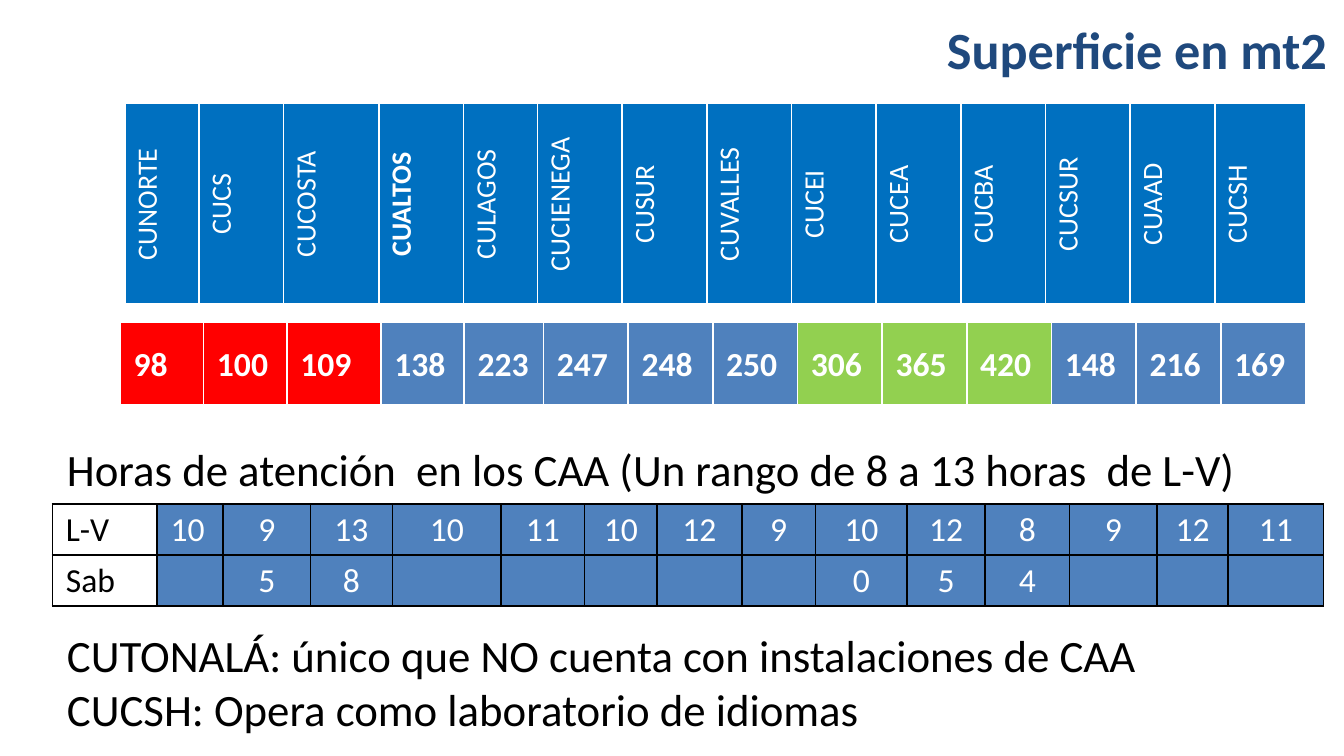
from lxml.etree import SubElement
from pptx import Presentation
from pptx.dml.color import RGBColor
from pptx.enum.text import MSO_ANCHOR, PP_ALIGN
from pptx.oxml.ns import qn
from pptx.util import Inches, Pt

WIDTH = 10
HEIGHT = WIDTH * 9 / 16
COLS, ROWS = 100, 56.25
BLUE, RED, GREEN, HEADER = "4F81BD", "FF0000", "92D050", "0070C0"
WHITE, BLACK, NAVY = "FFFFFF", "000000", "1F497D"
WHITE_EDGES = {"L": (WHITE, 1), "R": (WHITE, 1), "T": (WHITE, 1), "B": (WHITE, 3)}
BLACK_EDGES = {side: (BLACK, 1) for side in "LRTB"}

CENTERS = ["CUNORTE", "CUCS", "CUCOSTA", "CUALTOS", "CULAGOS", "CUCIENEGA", "CUSUR",
           "CUVALLES", "CUCEI", "CUCEA", "CUCBA", "CUCSUR", "CUAAD", "CUCSH"]
AREAS = [98, 100, 109, 138, 223, 247, 248, 250, 306, 365, 420, 148, 216, 169]
AREA_FILLS = [RED] * 3 + [BLUE] * 5 + [GREEN] * 3 + [BLUE] * 3
HOURS = [
    ["L-V", 10, 9, 13, 10, 11, 10, 12, 9, 10, 12, 8, 9, 12, 11],
    ["Sab", "", 5, 8, "", "", "", "", "", 0, 5, 4, "", "", ""],
]
CENTER_WIDTHS = [5.5, 6.3, 7.1, 6.3, 5.5] + [6.3] * 8 + [6.8]
AREA_WIDTHS = [6.2, 6.2, 7, 6.2, 5.9] + [6.3] * 9
HOUR_WIDTHS = [7.8, 4.9, 6.5, 6.1, 8.1, 6.2, 5.4, 6.3, 5.5, 6.8, 5.8, 6.3, 6.5, 5.3, 7.1]


def rgb(color):
    return RGBColor.from_string(color)


def x(cols):
    return Inches(cols * WIDTH / COLS)


def y(rows):
    return Inches(rows * HEIGHT / ROWS)


def write(p, text, size=18, color=WHITE, bold=False, align=PP_ALIGN.LEFT):
    p.alignment = align
    p.font.size = Pt(size)
    if text:
        r = p.add_run()
        r.text = text
        r.font.name = "Calibri"
        r.font.size = Pt(size)
        r.font.bold = bold
        r.font.color.rgb = rgb(color)


class Deck:
    def __init__(self):
        self.prs = Presentation()
        self.prs.slide_width, self.prs.slide_height = Inches(WIDTH), Inches(HEIGHT)
        self.s = self.prs.slides.add_slide(self.prs.slide_layouts[6])

    def text(self, left, top, width, height, lines, anchor=MSO_ANCHOR.TOP, **fmt):
        tf = self.s.shapes.add_textbox(x(left), y(top), x(width), y(height)).text_frame
        tf.word_wrap = True
        tf.vertical_anchor = anchor
        for i, line in enumerate(lines):
            write(tf.add_paragraph() if i else tf.paragraphs[0], line, **fmt)

    def table(self, left, top, widths, row_height, rows, edges, style):
        tbl = self.s.shapes.add_table(len(rows), len(widths), x(left), y(top),
                                      x(sum(widths)), y(row_height * len(rows))).table
        tbl.first_row = tbl.horz_banding = False
        for col, width in zip(tbl.columns, widths):
            col.width = x(width)
        for i, row in enumerate(rows):
            tbl.rows[i].height = y(row_height)
            for j, value in enumerate(row):
                self.cell(tbl.cell(i, j), str(value), edges, **style(j))

    def cell(self, cell, text, edges, fill, anchor=MSO_ANCHOR.TOP, vert=None, **fmt):
        cell.margin_left = cell.margin_right = Inches(0.1)
        cell.margin_top = cell.margin_bottom = Inches(0.04)
        cell.vertical_anchor = anchor
        write(cell.text_frame.paragraphs[0], text, **fmt)
        tcPr = cell._tc.get_or_add_tcPr()
        if vert:
            tcPr.set("vert", vert)
        for side, (color, width) in edges.items():
            ln = SubElement(tcPr, qn(f"a:ln{side}"), w=str(Pt(width)))
            SubElement(SubElement(ln, qn("a:solidFill")), qn("a:srgbClr"), val=color)
        cell.fill.solid()
        cell.fill.fore_color.rgb = rgb(fill)

    def save(self):
        self.prs.save("out.pptx")


def center_style(j):
    return dict(fill=HEADER, anchor=MSO_ANCHOR.MIDDLE, vert="vert270", size=15,
                bold=CENTERS[j] == "CUALTOS", align=PP_ALIGN.CENTER)


def area_style(j):
    return dict(fill=AREA_FILLS[j], anchor=MSO_ANCHOR.MIDDLE, bold=True)


def hour_style(j):
    if j == 0:
        return dict(fill=WHITE, color=BLACK)
    return dict(fill=BLUE, align=PP_ALIGN.LEFT if j == 1 else PP_ALIGN.CENTER)


def main():
    deck = Deck()
    deck.text(4, 2.1, 95.7, 3, ["Superficie en mt2"], anchor=MSO_ANCHOR.MIDDLE,
              size=28, color=NAVY, bold=True, align=PP_ALIGN.RIGHT)
    deck.table(8.95, 24, AREA_WIDTHS, 6.25, [AREAS], WHITE_EDGES, area_style)
    deck.text(4, 46.2, 94.5, 9.1,
              ["CUTONALÁ: único que NO cuenta con instalaciones de CAA",
               "CUCSH: Opera como laboratorio de idiomas"], size=24, color=BLACK)
    deck.table(3.9, 37.5, HOUR_WIDTHS, 3.7, HOURS, BLACK_EDGES, hour_style)
    deck.text(4, 32.4, 90.9, 5,
              ["Horas de atención  en los CAA (Un rango de 8 a 13 horas  de L-V)"],
              size=24, color=BLACK)
    deck.table(9.3, 7.7, CENTER_WIDTHS, 15, [CENTERS], WHITE_EDGES, center_style)
    deck.save()


if __name__ == "__main__":
    main()
